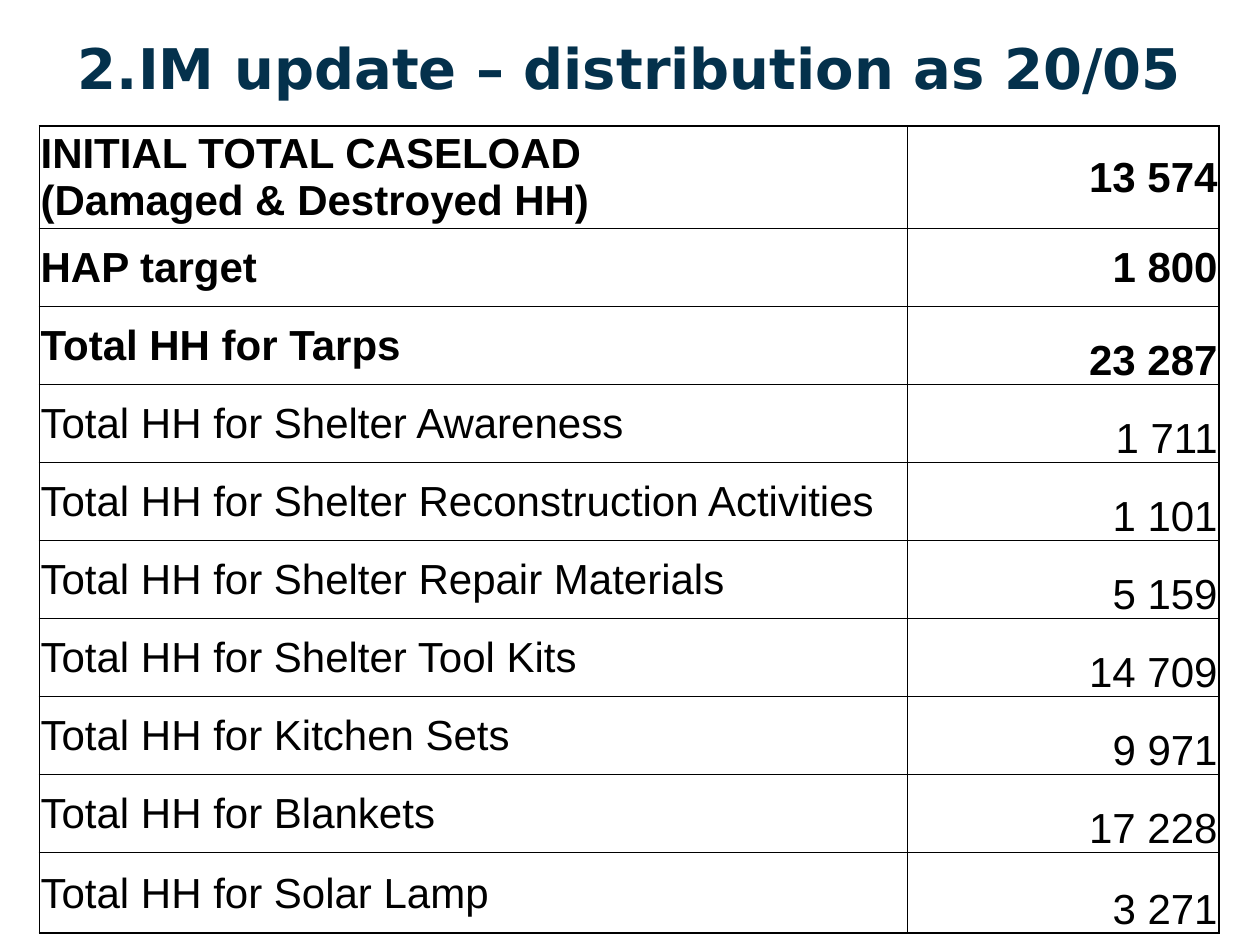
from dataclasses import dataclass

from lxml import etree
from pptx import Presentation
from pptx.dml.color import RGBColor
from pptx.enum.text import MSO_ANCHOR, PP_ALIGN
from pptx.oxml.ns import qn
from pptx.util import Pt

LEFT, CENTER, RIGHT = PP_ALIGN.LEFT, PP_ALIGN.CENTER, PP_ALIGN.RIGHT
MIDDLE, BOTTOM = MSO_ANCHOR.MIDDLE, MSO_ANCHOR.BOTTOM


@dataclass(frozen=True)
class Theme:
    title: str = "04314C"
    ink: str = "000000"
    title_size: int = 32
    body_size: int = 24
    title_font: str = "DejaVu Sans"
    body_font: str = "Arial"


theme = Theme()


def add_run(p, text, font, size, color, bold):
    r = p.add_run()
    r.text = text
    r.font.name = font
    r.font.size = Pt(size)
    r.font.bold = bold
    r.font.color.rgb = RGBColor.from_string(color)


def add_border(cell, side, width):
    ln = etree.SubElement(cell._tc.get_or_add_tcPr(), qn(f"a:ln{side}"), w=str(Pt(width)))
    fill = etree.SubElement(ln, qn("a:solidFill"))
    etree.SubElement(fill, qn("a:srgbClr"), val=theme.ink)


prs = Presentation()
prs.slide_width, prs.slide_height = Pt(720), Pt(540)
s = prs.slides.add_slide(prs.slide_layouts[6])

title = s.shapes.add_textbox(Pt(0), Pt(10), Pt(720), Pt(57))
tf = title.text_frame
tf.word_wrap = True
tf.vertical_anchor = MIDDLE
p = tf.paragraphs[0]
p.alignment = CENTER
add_run(p, "2.IM update – distribution as 20/05", theme.title_font, theme.title_size, theme.title, True)

rows = [
    (["INITIAL TOTAL CASELOAD", "(Damaged & Destroyed HH)"], "13 574"),
    (["HAP target"], "1 800"),
    (["Total HH for Tarps"], "23 287"),
    (["Total HH for Shelter Awareness"], "1 711"),
    (["Total HH for Shelter Reconstruction Activities"], "1 101"),
    (["Total HH for Shelter Repair Materials"], "5 159"),
    (["Total HH for Shelter Tool Kits"], "14 709"),
    (["Total HH for Kitchen Sets"], "9 971"),
    (["Total HH for Blankets"], "17 228"),
    (["Total HH for Solar Lamp"], "3 271"),
]
col_widths = [496, 178]
row_height, last_height = 44.64, 46
bold_rows, middle_rows = 3, 2
last = len(rows) - 1

frame = s.shapes.add_table(len(rows), 2, Pt(22.5), Pt(72), Pt(sum(col_widths)), Pt(row_height * last + last_height))
table = frame.table
table.first_row = False
table.horz_banding = False
for col, width in zip(table.columns, col_widths):
    col.width = Pt(width)

for i, (label, value) in enumerate(rows):
    table.rows[i].height = Pt(last_height if i == last else row_height)
    for j, lines in enumerate((label, [value])):
        cell = table.cell(i, j)
        cell.margin_left = cell.margin_top = cell.margin_right = Pt(0.72)
        cell.margin_bottom = Pt(0)
        cell.vertical_anchor = BOTTOM if j == 1 and i >= middle_rows else MIDDLE
        outer_sides = {"L": j == 0, "R": j == 1, "T": i == 0, "B": i == last}
        for side, outer in outer_sides.items():
            add_border(cell, side, 1 if outer else 0.5)
        cell.fill.background()
        tf = cell.text_frame
        for n, line in enumerate(lines):
            p = tf.add_paragraph() if n else tf.paragraphs[0]
            p.alignment = RIGHT if j else LEFT
            add_run(p, line, theme.body_font, theme.body_size, theme.ink, i < bold_rows)

prs.save("out.pptx")
